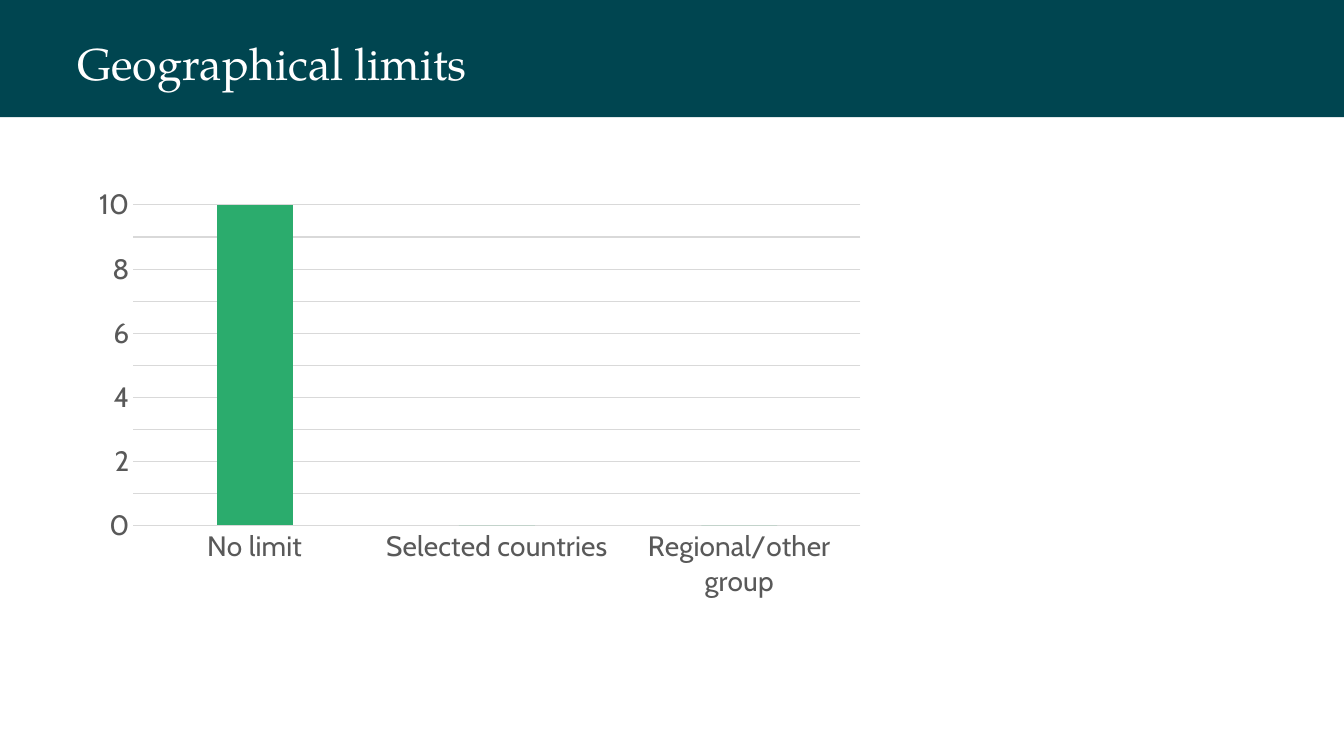
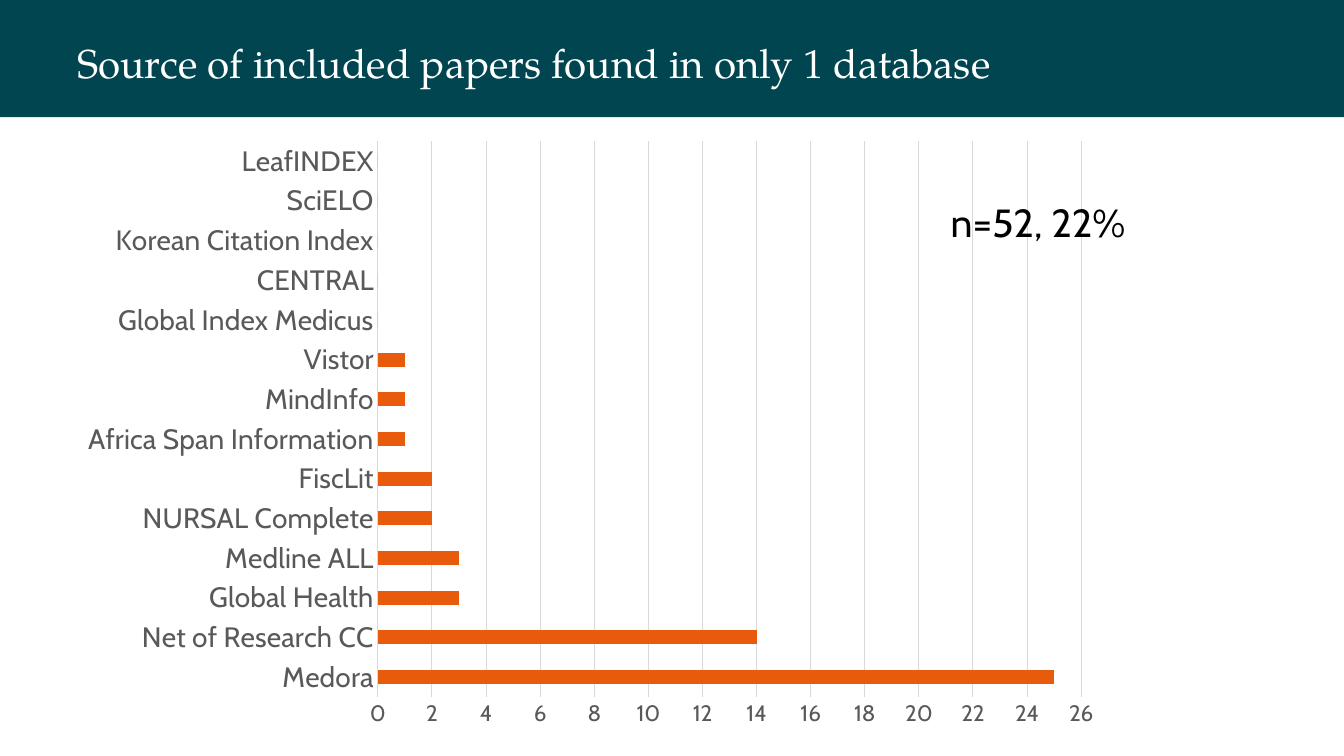
from dataclasses import dataclass

from pptx import Presentation
from pptx.chart.data import CategoryChartData
from pptx.dml.color import RGBColor
from pptx.enum.chart import XL_CHART_TYPE, XL_TICK_MARK
from pptx.enum.shapes import MSO_SHAPE
from pptx.enum.text import MSO_ANCHOR
from pptx.util import Inches, Pt

COLUMNS = XL_CHART_TYPE.COLUMN_CLUSTERED
BARS = XL_CHART_TYPE.BAR_CLUSTERED
NO_TICK = XL_TICK_MARK.NONE
RECTANGLE = MSO_SHAPE.RECTANGLE
MIDDLE, TOP = MSO_ANCHOR.MIDDLE, MSO_ANCHOR.TOP
BLANK_LAYOUT = 6


@dataclass(frozen=True)
class Theme:
    band: str = "004550"
    title_ink: str = "FFFFFF"
    ink: str = "000000"
    axis_ink: str = "595959"
    rule: str = "D9D9D9"
    green: str = "2BAC6D"
    orange: str = "E95B0C"
    title_font: str = "TeX Gyre Pagella"
    body_font: str = "Cabin"
    title_size: float = 32
    long_title_size: float = 28.8
    note_size: float = 28
    label_size: float = 20
    small_label_size: float = 16
    rule_width: float = 0.75


@dataclass(frozen=True)
class Box:
    left: float
    top: float
    width: float
    height: float

    def share(self, left, top, width, height):
        return Box(self.left + left * self.width, self.top + top * self.height,
                   width * self.width, height * self.height)

    def place(self):
        return [Inches(n) for n in (self.left, self.top, self.width, self.height)]


THEME = Theme()
PAGE = Box(0, 0, 13.33, 7.5)
BAND = PAGE.share(0, 0, 1, 0.155)
BODY = PAGE.share(0, 0.155, 1, 0.845)

LIMITS = {"No limit": 10, "Selected countries": 0, "Regional/other group": 0}
SOURCES = {
    "Medora": 25,
    "Net of Research CC": 14,
    "Global Health": 3,
    "Medline ALL": 3,
    "NURSAL Complete": 2,
    "FiscLit": 2,
    "Africa Span Information": 1,
    "MindInfo": 1,
    "Vistor": 1,
    "Global Index Medicus": 0,
    "CENTRAL": 0,
    "Korean Citation Index": 0,
    "SciELO": 0,
    "LeafINDEX": 0,
}


def style_font(font, name, size, color):
    font.name = name
    font.size = Pt(size)
    font.color.rgb = RGBColor.from_string(color)


def style_rule(line):
    line.color.rgb = RGBColor.from_string(THEME.rule)
    line.width = Pt(THEME.rule_width)


def add_text(slide, box, text, font, size, color, anchor=TOP):
    frame = slide.shapes.add_textbox(*box.place()).text_frame
    frame.word_wrap = True
    frame.vertical_anchor = anchor
    paragraph = frame.paragraphs[0]
    paragraph.text = text
    style_font(paragraph.font, font, size, color)
    return paragraph


def add_title_band(slide, box, title, size):
    band = slide.shapes.add_shape(RECTANGLE, *box.place())
    band.shadow.inherit = False
    band.fill.solid()
    band.fill.fore_color.rgb = RGBColor.from_string(THEME.band)
    band.line.fill.background()
    heading = add_text(slide, box.share(0.05, 0.27, 0.9, 0.58), title,
                       THEME.title_font, size, THEME.title_ink, MIDDLE)
    heading.line_spacing = 0.9


def add_count_chart(slide, box, kind, counts, color, maximum, step,
                    value_size, gap, overlap=0):
    data = CategoryChartData(number_format="General")
    data.categories = list(counts)
    data.add_series("Series 1", list(counts.values()))
    chart = slide.shapes.add_chart(kind, *box.place(), data).chart
    chart.has_legend = False
    chart.has_title = False
    style_font(chart.font, THEME.body_font, 10, THEME.ink)

    plot = chart.plots[0]
    plot.vary_by_categories = False
    plot.gap_width = gap
    plot.overlap = overlap
    fill = plot.series[0].format.fill
    fill.solid()
    fill.fore_color.rgb = RGBColor.from_string(color)

    categories, values = chart.category_axis, chart.value_axis
    for axis, size in ((categories, THEME.label_size), (values, value_size)):
        axis.major_tick_mark = NO_TICK
        axis.minor_tick_mark = NO_TICK
        style_font(axis.tick_labels.font, THEME.body_font, size, THEME.axis_ink)
    style_rule(categories.format.line)
    values.format.line.fill.background()
    values.minimum_scale = 0
    values.maximum_scale = maximum
    values.major_unit = step
    values.has_major_gridlines = True
    style_rule(values.major_gridlines.format.line)


def build_limits_slide(slide):
    add_title_band(slide, BAND, "Geographical limits", THEME.title_size)
    add_count_chart(slide, BODY.share(0.062, 0.097, 0.59, 0.67), COLUMNS, LIMITS,
                    THEME.green, 10, 1, THEME.label_size, 219, -27)


def build_sources_slide(slide):
    add_title_band(slide, BAND, "Source of included papers found in only 1 database",
                   THEME.long_title_size)
    add_count_chart(slide, BODY.share(0.05, 0.019, 0.779, 0.955), BARS, SOURCES,
                    THEME.orange, 26, 2, THEME.small_label_size, 182)
    add_text(slide, BODY.share(0.7, 0.12, 0.29, 0.09), "n=52, 22%",
             THEME.body_font, THEME.note_size, THEME.ink)


def main():
    deck = Presentation()
    deck.slide_width, deck.slide_height = Inches(PAGE.width), Inches(PAGE.height)
    for build in (build_limits_slide, build_sources_slide):
        build(deck.slides.add_slide(deck.slide_layouts[BLANK_LAYOUT]))
    deck.save("out.pptx")


if __name__ == "__main__":
    main()
